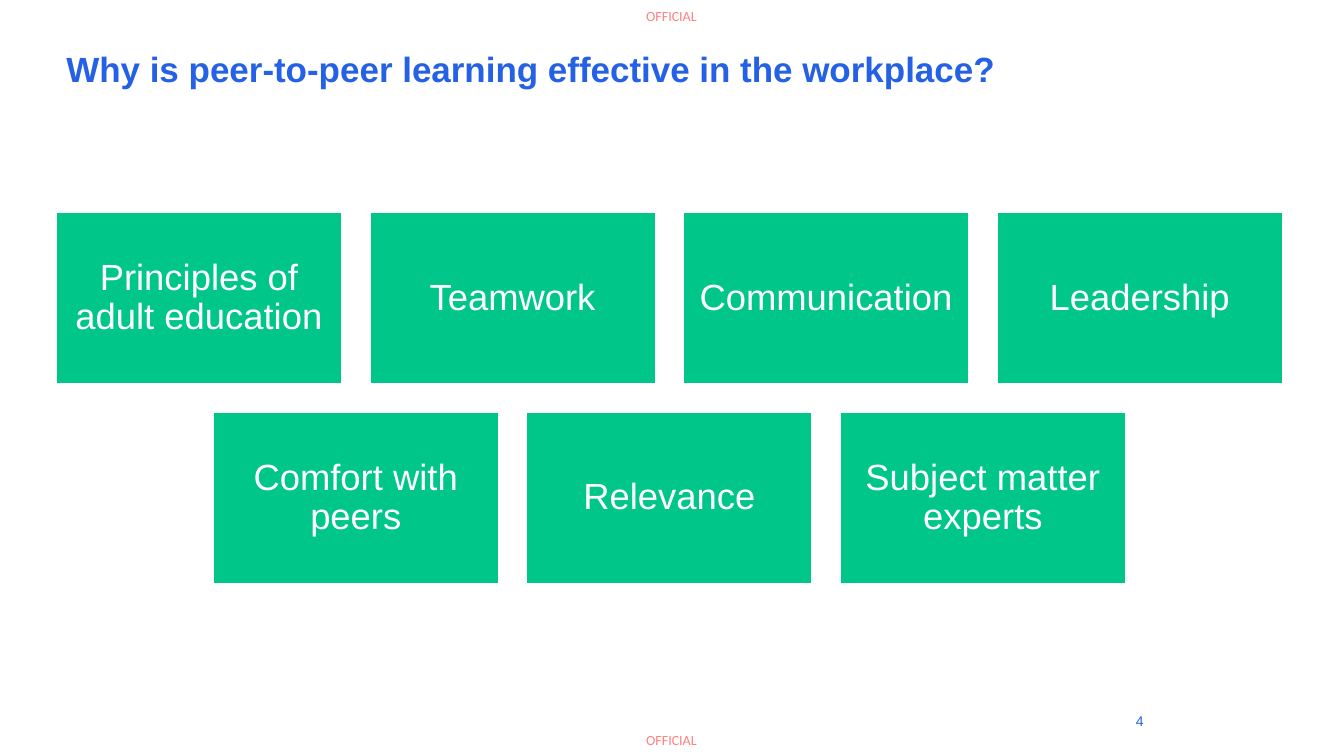
from lxml import etree
from pptx import Presentation
from pptx.dml.color import RGBColor
from pptx.enum.shapes import MSO_SHAPE
from pptx.enum.text import MSO_ANCHOR, PP_ALIGN
from pptx.oxml.ns import qn
from pptx.util import Inches, Pt

RECTANGLE = MSO_SHAPE.RECTANGLE
TOP, MIDDLE = MSO_ANCHOR.TOP, MSO_ANCHOR.MIDDLE
LEFT, CENTER, RIGHT = PP_ALIGN.LEFT, PP_ALIGN.CENTER, PP_ALIGN.RIGHT

COLORS = {"blue": "2461E5", "green": "00C689", "white": "FFFFFF", "red": "FF0000"}

CARD_ROWS = [
    ["Principles of adult education", "Teamwork", "Communication", "Leadership"],
    ["Comfort with peers", "Relevance", "Subject matter experts"],
]
CARD_WIDTH, CARD_HEIGHT = 2.83, 1.7
COLUMN_STEP, ROW_STEP = 3.11, 1.98
CARDS_CENTER, CARDS_TOP = 6.64, 2.11


class SlideBuilder:
    """Holds the style and the current slide, and adds its elements."""

    def __init__(self, slide, font="Arial"):
        self.slide = slide
        self.font = font

    def fill_text(self, shape, text, size, color, align, anchor, margins,
                  bold=False, font=None, spacing=1.0, alpha=None):
        frame = shape.text_frame
        frame.word_wrap = True
        frame.vertical_anchor = anchor
        frame.margin_left = frame.margin_right = Inches(margins[0])
        frame.margin_top = frame.margin_bottom = Inches(margins[1])
        paragraph = frame.paragraphs[0]
        paragraph.alignment = align
        paragraph.line_spacing = spacing
        run = paragraph.add_run()
        run.text = text
        run.font.name = font or self.font
        run.font.size = Pt(size)
        run.font.bold = bold
        run.font.color.rgb = RGBColor.from_string(COLORS[color])
        if alpha is not None:
            color_element = next(shape.element.iter(qn("a:srgbClr")))
            etree.SubElement(color_element, qn("a:alpha"), val=str(alpha * 1000))

    def text(self, left, top, width, height, text, size, color,
             align=LEFT, anchor=TOP, margins=(0.1, 0.05), **style):
        shape = self.slide.shapes.add_textbox(
            Inches(left), Inches(top), Inches(width), Inches(height))
        self.fill_text(shape, text, size, color, align, anchor, margins, **style)
        return shape

    def marking(self, top):
        shape = self.text(6.41, top, 0.53, 0.17, "OFFICIAL", 10, "red",
                          margins=(0, 0), font="Calibri", alpha=50)
        shape.text_frame.word_wrap = False

    def card(self, left, top, text):
        shape = self.slide.shapes.add_shape(
            RECTANGLE, Inches(left), Inches(top),
            Inches(CARD_WIDTH), Inches(CARD_HEIGHT))
        shape.shadow.inherit = False
        shape.fill.solid()
        shape.fill.fore_color.rgb = RGBColor.from_string(COLORS["green"])
        shape.line.color.rgb = RGBColor.from_string(COLORS["white"])
        shape.line.width = Pt(1)
        self.fill_text(shape, text, 26, "white", CENTER, MIDDLE, (0.11, 0.11), spacing=0.9)


def main():
    presentation = Presentation()
    presentation.slide_width = Inches(13.33)
    presentation.slide_height = Inches(7.5)
    builder = SlideBuilder(presentation.slides.add_slide(presentation.slide_layouts[6]))

    for top in (0.07, 7.26):
        builder.marking(top)
    builder.text(0.56, 0.47, 9.74, 0.51,
                 "Why is peer-to-peer learning effective in the workplace?",
                 25, "blue", bold=True, spacing=0.9)
    builder.text(9.23, 6.95, 2.21, 0.4, "4", 10, "blue", align=RIGHT, anchor=MIDDLE)

    for row, labels in enumerate(CARD_ROWS):
        row_width = COLUMN_STEP * (len(labels) - 1) + CARD_WIDTH
        row_left = CARDS_CENTER - row_width / 2
        for column, label in enumerate(labels):
            builder.card(row_left + column * COLUMN_STEP, CARDS_TOP + row * ROW_STEP, label)

    presentation.save("out.pptx")


if __name__ == "__main__":
    main()
